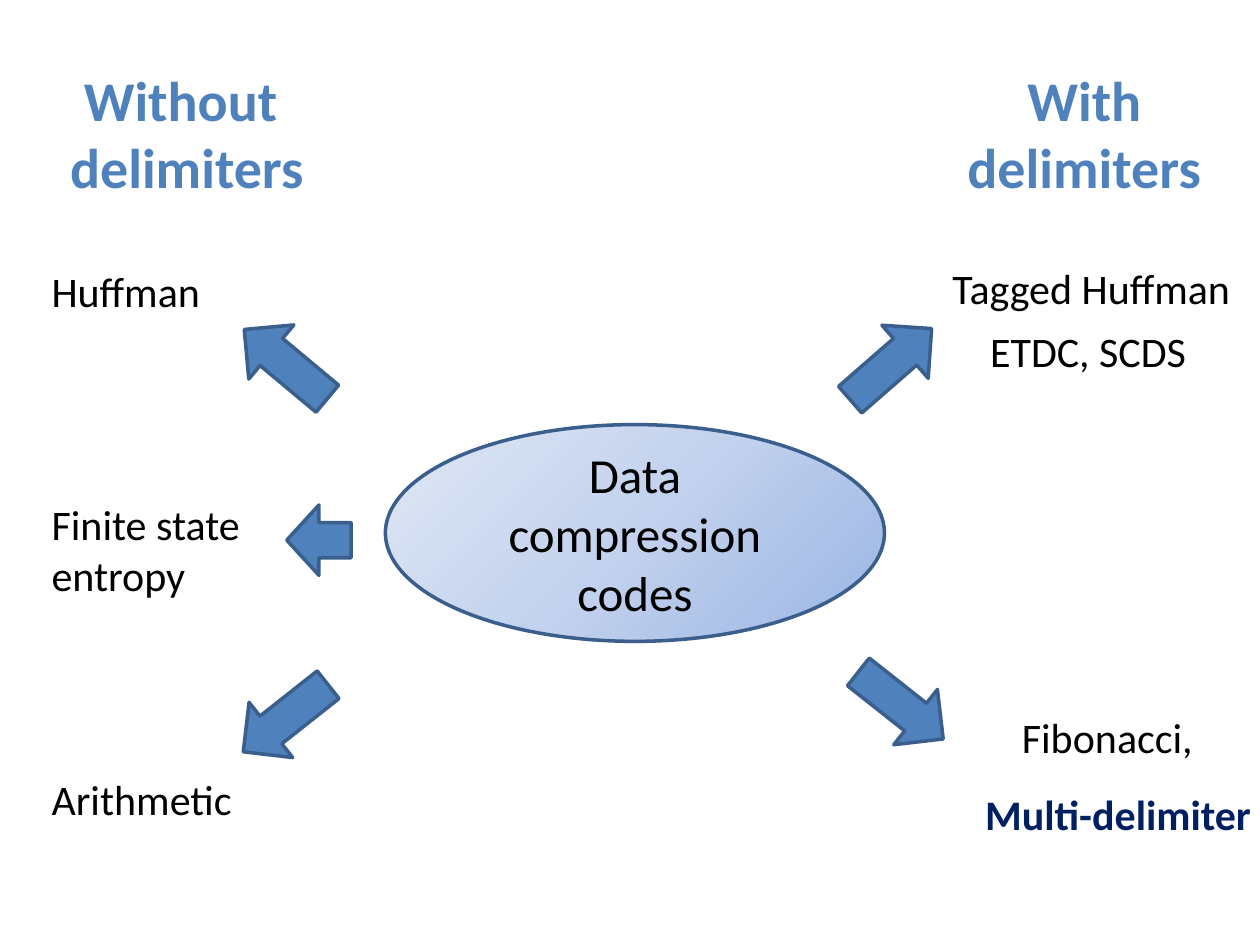
from copy import deepcopy
from dataclasses import dataclass

from pptx import Presentation
from pptx.dml.color import RGBColor
from pptx.enum.shapes import MSO_SHAPE
from pptx.enum.text import MSO_ANCHOR, PP_ALIGN
from pptx.oxml.ns import qn
from pptx.util import Cm, Pt


@dataclass(frozen=True)
class Theme:
    font: str = "Calibri"
    ink: str = "000000"
    accent: str = "4F81BD"
    outline: str = "3A5F8C"
    strong: str = "002060"
    gradient: tuple = ((0, "9AB5E4"), (0.5, "C2D1ED"), (1, "E1E8F5"))
    heading: int = 32
    hub: int = 28
    label: int = 24
    line: int = 2


@dataclass(frozen=True)
class Heading:
    idx: int
    text: str
    x: float


@dataclass(frozen=True)
class Label:
    text: str
    x: float
    y: float
    w: float
    h: float = 1.27
    strong: bool = False


@dataclass(frozen=True)
class Arrow:
    x: float
    y: float
    angle: float
    h: float = 2.18


T = Theme()
HEADINGS = (
    Heading(1, "Without \vdelimiters", 1.14),
    Heading(3, "With\vdelimiters", 19.23),
)
LABELS = (
    Label("Huffman", 0.79, 5.23, 8.56),
    Label("Finite state entropy", 0.79, 9.93, 5.56, 2.31),
    Label("Arithmetic", 0.79, 15.47, 8.56),
    Label("Tagged Huffman", 18.95, 5.16, 8.56),
    Label("ETDC, SCDS", 19.71, 6.43, 5.82),
    Label("Fibonacci,", 20.35, 14.22, 5.82),
    Label("Multi-delimiter", 19.61, 15.77, 8.81, strong=True),
)
ARROWS = (
    Arrow(5.05, 6.25, 129.8),
    Arrow(5.72, 10.24, 90, 1.3),
    Arrow(5.05, 13.39, 51.7),
    Arrow(17.25, 6.25, 228.9),
    Arrow(17.45, 13.13, 308.3),
)
ARROW_W = 1.42


def write(tf, text: str, *, size: int, color: str = T.ink, bold: bool = False,
          align=PP_ALIGN.LEFT, anchor=MSO_ANCHOR.TOP, wrap: bool = True) -> None:
    tf.word_wrap = wrap
    tf.vertical_anchor = anchor
    p = tf.paragraphs[0]
    p.text = text
    p.alignment = align
    p.space_before = Pt(0)
    for r in p.runs:
        r.font.name = T.font
        r.font.size = Pt(size)
        r.font.bold = bold
        r.font.color.rgb = RGBColor.from_string(color)


def add_outlined(s, kind, x: float, y: float, w: float, h: float):
    sp = s.shapes.add_shape(kind, Cm(x), Cm(y), Cm(w), Cm(h))
    sp.shadow.inherit = False
    sp.line.color.rgb = RGBColor.from_string(T.outline)
    sp.line.width = Pt(T.line)
    return sp


def add_hub(s, text: str) -> None:
    sp = add_outlined(s, MSO_SHAPE.OVAL, 7.77, 8.56, 10.06, 4.37)
    sp.fill.gradient()
    sp.fill.gradient_angle = 135
    stops = next(sp._element.spPr.iter(qn("a:gsLst")))
    stops.append(deepcopy(stops[0]))
    for stop, (position, color) in zip(sp.fill.gradient_stops, T.gradient):
        stop.position = position
        stop.color.rgb = RGBColor.from_string(color)
    write(sp.text_frame, text, size=T.hub, align=PP_ALIGN.CENTER,
          anchor=MSO_ANCHOR.MIDDLE)


def add_label(s, label: Label) -> None:
    sp = s.shapes.add_textbox(Cm(label.x), Cm(label.y), Cm(label.w), Cm(label.h))
    write(sp.text_frame, label.text, size=T.label, bold=label.strong,
          color=T.strong if label.strong else T.ink)


def add_arrow(s, arrow: Arrow) -> None:
    sp = add_outlined(s, MSO_SHAPE.DOWN_ARROW, arrow.x, arrow.y, ARROW_W, arrow.h)
    sp.rotation = arrow.angle
    sp.fill.solid()
    sp.fill.fore_color.rgb = RGBColor.from_string(T.accent)


def fill_headings(s) -> None:
    used = {heading.idx: heading for heading in HEADINGS}
    for sp in list(s.placeholders):
        heading = used.get(sp.placeholder_format.idx)
        if heading is None:
            sp._element.getparent().remove(sp._element)
            continue
        sp.left, sp.top, sp.width, sp.height = Cm(heading.x), Cm(1.19), Cm(5.26), Cm(3)
        write(sp.text_frame, heading.text, size=T.heading, color=T.accent,
              bold=True, align=PP_ALIGN.CENTER, wrap=False)


def main() -> None:
    prs = Presentation()
    prs.slide_width, prs.slide_height = Cm(25.4), Cm(19.05)
    s = prs.slides.add_slide(prs.slide_layouts.get_by_name("Comparison"))
    fill_headings(s)
    add_hub(s, "Data compression codes")
    for label in LABELS:
        add_label(s, label)
    for arrow in ARROWS:
        add_arrow(s, arrow)
    prs.save("out.pptx")


if __name__ == "__main__":
    main()
